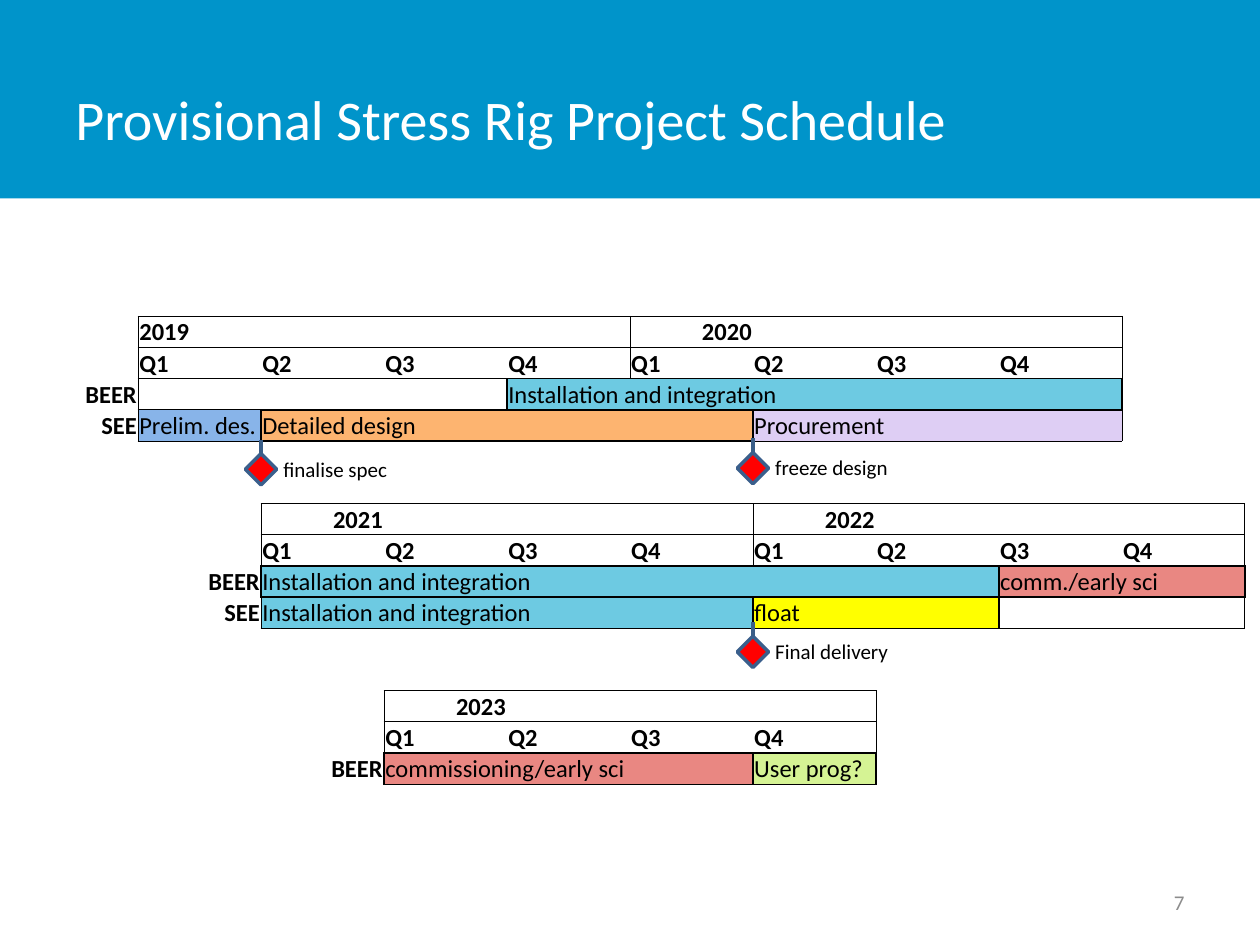
"""Build the provisional stress rig project schedule slide."""
from lxml import etree
from pptx import Presentation, util as u
from pptx.dml.color import RGBColor
from pptx.enum import shapes, text
from pptx.oxml import ns

WHITE = RGBColor(0xFF, 0xFF, 0xFF)
BLACK = RGBColor(0, 0, 0)
GREY = RGBColor(0x8C, 0x8C, 0x8C)
BAND = RGBColor(0x00, 0x94, 0xCA)
CYAN = RGBColor(0x6D, 0xCA, 0xE2)
BLUE = RGBColor(0x88, 0xB4, 0xE9)
ORANGE = RGBColor(0xFD, 0xB4, 0x70)
LILAC = RGBColor(0xDE, 0xCE, 0xF4)
CORAL = RGBColor(0xE9, 0x87, 0x82)
YELLOW = RGBColor(0xFF, 0xFF, 0x00)
GREEN = RGBColor(0xD5, 0xF3, 0x94)
RED = RGBColor(0xFF, 0, 0)
OUTLINE = RGBColor(0x3A, 0x5F, 0x8C)
STEM = RGBColor(0x3A, 0x5E, 0x88)
LEFT, RIGHT = text.PP_ALIGN.LEFT, text.PP_ALIGN.RIGHT

presentation = Presentation()
presentation.slide_width, presentation.slide_height = u.Inches(10), u.Inches(7.5)
WIDTH, HEIGHT = presentation.slide_width, presentation.slide_height
slide = presentation.slides.add_slide(presentation.slide_layouts[6])

COLUMNS, ROWS = 10, 15
COLUMN = u.Inches(9.76) // COLUMNS
ROW = u.Inches(3.72) // ROWS
TABLE_LEFT, TABLE_TOP = u.Inches(0.12), u.Inches(2.51)


def write(paragraph, words, size, color, bold=False, align=LEFT):
    paragraph.text = words
    paragraph.alignment = align
    font = paragraph.font
    font.name, font.size, font.bold = "Calibri", u.Pt(size), bold
    font.color.rgb = color


def outline(edges, row, column, length, width):
    sides = [((row, column, "L"), (row, column - 1, "R")),
             ((row, column + length - 1, "R"), (row, column + length, "L"))]
    for place in range(column, column + length):
        sides.append(((row, place, "T"), (row - 1, place, "B")))
        sides.append(((row, place, "B"), (row + 1, place, "T")))
    for pair in sides:
        for edge in pair:
            edges[edge] = max(width, edges.get(edge, 0))


band = slide.shapes.add_shape(shapes.MSO_SHAPE.RECTANGLE, 0, 0, WIDTH, int(HEIGHT * 0.21))
band.shadow.inherit = False
band.fill.solid()
band.fill.fore_color.rgb = BAND
band.line.fill.background()

for words, left, top, width, height, size, color, align in [
    ("Provisional Stress Rig Project Schedule", 0.05, 0.04, 0.78, 0.17, 32, WHITE, LEFT),
    ("7", 0.72, 0.93, 0.23, 0.05, 12, GREY, RIGHT),
]:
    box = slide.shapes.add_textbox(int(WIDTH * left), int(HEIGHT * top),
                                   int(WIDTH * width), int(HEIGHT * height))
    box.text_frame.word_wrap = True
    box.text_frame.vertical_anchor = text.MSO_ANCHOR.MIDDLE
    write(box.text_frame.paragraphs[0], words, size, color, align=align)

years = [("2019", 0, 1, LEFT), ("2020", 0, 5, RIGHT), ("2021", 6, 2, RIGHT),
         ("2022", 6, 6, RIGHT), ("2023", 12, 3, RIGHT)]
teams = [("BEER", 2, 0), ("SEE", 3, 0), ("BEER", 8, 1), ("SEE", 9, 1), ("BEER", 14, 2)]
bars = [
    ("", 2, 1, 3, 1, None, 0.5),
    ("Installation and integration", 2, 4, 5, 3, CYAN, 1),
    ("Prelim. des.", 3, 1, 1, 1, BLUE, 0.5),
    ("Detailed design", 3, 2, 4, 2, ORANGE, 1),
    ("Procurement", 3, 6, 3, 2, LILAC, 0.5),
    ("Installation and integration", 8, 2, 6, 3, CYAN, 1),
    ("comm./early sci", 8, 8, 2, 2, CORAL, 1),
    ("Installation and integration", 9, 2, 4, 3, CYAN, 0.5),
    ("float", 9, 6, 2, 1, YELLOW, 1),
    ("", 9, 8, 2, 1, None, 0.5),
    ("commissioning/early sci", 14, 3, 3, 2, CORAL, 1),
    ("User prog?", 14, 6, 1, 1, GREEN, 1),
]

table = slide.shapes.add_table(ROWS, COLUMNS, TABLE_LEFT, TABLE_TOP,
                               COLUMN * COLUMNS, ROW * ROWS).table
table.first_row = table.horz_banding = False
style = table._tbl.tblPr.find(ns.qn("a:tableStyleId"))
style.text = "{2D5ABB26-0587-4C30-8999-92F81FD0307C}"

labels, fills, edges = {}, {}, {}
for words, row, column, align in years:
    labels[row, column] = (words, True, align)
    for quarter in range(4):
        labels[row + 1, column + quarter] = (f"Q{quarter + 1}", True, LEFT)
    outline(edges, row, column, 4, 0.5)
    outline(edges, row + 1, column, 4, 0.5)
for words, row, column in teams:
    labels[row, column] = (words, True, RIGHT)
for words, row, column, length, merged, color, width in bars:
    labels[row, column] = (words, False, LEFT)
    outline(edges, row, column, length, width)
    for place in range(column, column + length):
        fills[row, place] = color
    if merged > 1:
        table.cell(row, column).merge(table.cell(row, column + merged - 1))
    if merged == length:
        edges[row, column, "R"] = width

for row in range(ROWS):
    for column in range(COLUMNS):
        cell = table.cell(row, column)
        cell.margin_left = cell.margin_right = cell.margin_top = u.Inches(0.01)
        cell.margin_bottom = 0
        cell.vertical_anchor = text.MSO_ANCHOR.BOTTOM
        words, bold, align = labels.get((row, column), ("", False, LEFT))
        paragraph = cell.text_frame.paragraphs[0]
        write(paragraph, words, 14, BLACK, bold, align)
        paragraph._p.get_or_add_endParaRPr().set("sz", "1400")
        properties = cell._tc.get_or_add_tcPr()
        for side in "LRTB":
            width = edges.get((row, column, side), 0)
            border = etree.SubElement(properties, ns.qn(f"a:ln{side}"), w=str(u.Pt(width)))
            if width:
                solid = etree.SubElement(border, ns.qn("a:solidFill"))
                etree.SubElement(solid, ns.qn("a:srgbClr"), val=str(BLACK))
            else:
                etree.SubElement(border, ns.qn("a:noFill"))
        color = fills.get((row, column))
        if color is None:
            cell.fill.background()
        else:
            cell.fill.solid()
            cell.fill.fore_color.rgb = color

for words, column, row in [("finalise spec", 2, 4.4), ("freeze design", 6, 4.36),
                           ("Final delivery", 6, 10.24)]:
    center = TABLE_LEFT + COLUMN * column
    top = TABLE_TOP + int(ROW * row)
    milestone = slide.shapes.add_group_shape()
    diamond = milestone.shapes.add_shape(shapes.MSO_SHAPE.DIAMOND,
                                         center - ROW // 2, top, ROW, ROW)
    diamond.shadow.inherit = False
    diamond.fill.solid()
    diamond.fill.fore_color.rgb = RED
    diamond.line.color.rgb = OUTLINE
    diamond.line.width = u.Pt(2)
    caption = milestone.shapes.add_textbox(center + int(COLUMN * 0.08), top - int(ROW * 0.12),
                                           int(COLUMN * 1.18), int(ROW * 1.23))
    caption.text_frame.word_wrap = True
    write(caption.text_frame.paragraphs[0], words, 12, BLACK)
    stem = milestone.shapes.add_connector(shapes.MSO_CONNECTOR.STRAIGHT,
                                          center, top, center, top - int(ROW * 0.45))
    stem.line.color.rgb = STEM
    stem.line.width = u.Pt(2.25)
    etree.SubElement(stem._element.spPr, ns.qn("a:effectLst"))

presentation.save("out.pptx")
